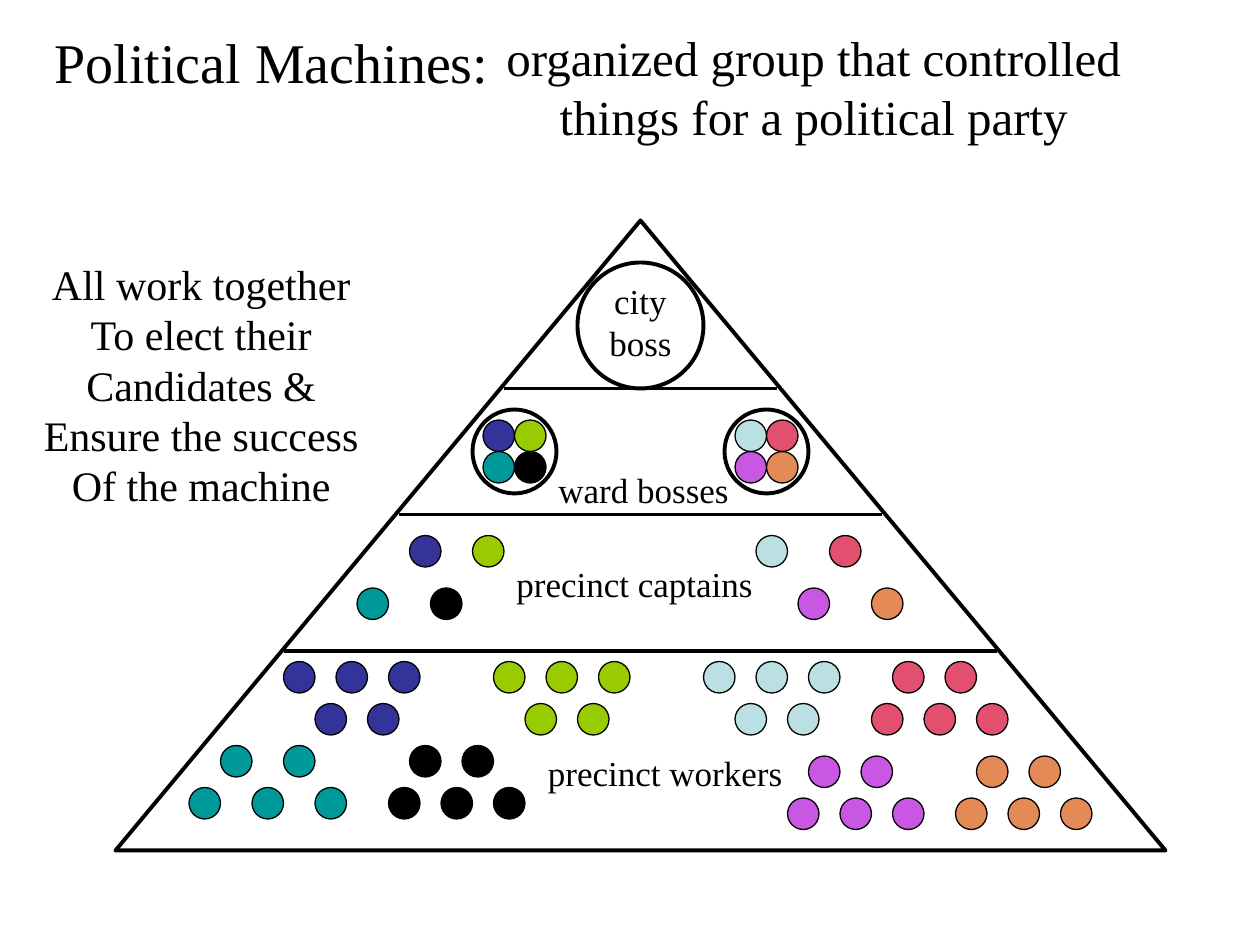
from dataclasses import dataclass

from lxml import etree
from pptx import Presentation
from pptx.dml.color import RGBColor
from pptx.enum.shapes import MSO_CONNECTOR, MSO_SHAPE
from pptx.enum.text import MSO_ANCHOR, MSO_AUTO_SIZE, PP_ALIGN
from pptx.oxml.ns import qn
from pptx.util import Pt

OVAL = MSO_SHAPE.OVAL
TRIANGLE = MSO_SHAPE.ISOSCELES_TRIANGLE
STRAIGHT = MSO_CONNECTOR.STRAIGHT
LEFT, CENTER = PP_ALIGN.LEFT, PP_ALIGN.CENTER
TOP = MSO_ANCHOR.TOP
NO_FIT = MSO_AUTO_SIZE.NONE

FONT = "Times New Roman"
BLACK = "000000"
DOT = 18
DROP = 24
THICK, THIN = 2.25, 0.75


@dataclass
class Row:
    left: float
    count: int
    step: float = 30


@dataclass
class Team:
    hue: str
    chief: tuple[float, float]
    top: float
    upper: Row
    lower: Row


@dataclass
class Ward:
    left: float
    teams: list[Team]


@dataclass
class Label:
    text: str
    box: tuple[float, float, float, float]
    size: float = 20
    align: PP_ALIGN = LEFT
    wrap: bool = False


WARDS = [
    Ward(270, [
        Team("333399", (234, 306), 378, Row(162, 3), Row(180, 2)),
        Team("99CC00", (270, 306), 378, Row(282, 3), Row(300, 2)),
        Team("009999", (204, 336), 426, Row(126, 2, 36), Row(108, 3, 36)),
        Team(BLACK, (246, 336), 426, Row(234, 2), Row(222, 3)),
    ]),
    Ward(414, [
        Team("BBE0E3", (432, 306), 378, Row(402, 3), Row(420, 2)),
        Team("E34F6F", (474, 306), 378, Row(510, 2), Row(498, 3)),
        Team("C858E3", (456, 336), 432, Row(462, 2), Row(450, 3)),
        Team("E38A56", (498, 336), 432, Row(558, 2), Row(546, 3)),
    ]),
]

TIERS = [(288, 444, 222), (228, 504, 294), (162, 570, 372)]

TITLE = Label("Political Machines:", (24, 12, 276, 45), 32, LEFT, True)
LABELS = [
    Label("organized group that controlled things for a political party",
          (258, 12, 414, 74), 28, CENTER, True),
    Label("All work together\nTo elect their\nCandidates &\n"
          "Ensure the success\nOf the machine", (18, 144, 194, 151), 24, CENTER),
    Label("city boss", (336, 156, 60, 55), 20, CENTER, True),
    Label("ward bosses", (312, 264, 114, 31)),
    Label("precinct captains", (288, 318, 150, 31)),
    Label("precinct workers", (306, 426, 150, 31)),
]


def color(code: str) -> RGBColor:
    return RGBColor.from_string(code)


def place(shape, box: tuple[float, float, float, float]) -> None:
    shape.left, shape.top, shape.width, shape.height = map(Pt, box)


def write(shape, label: Label) -> None:
    frame = shape.text_frame
    frame.text = label.text
    frame.word_wrap = label.wrap
    frame.auto_size = NO_FIT
    frame.vertical_anchor = TOP
    for para in frame.paragraphs:
        para.alignment = label.align
        for run in para.runs:
            run.font.name = FONT
            run.font.size = Pt(label.size)
            run.font.color.rgb = color(BLACK)


def draw(slide, kind: MSO_SHAPE, box: tuple[float, float, float, float],
         hue: str = "", weight: float = THICK) -> None:
    shape = slide.shapes.add_shape(kind, *map(Pt, box))
    shape.shadow.inherit = False
    if hue:
        shape.fill.solid()
        shape.fill.fore_color.rgb = color(hue)
    else:
        shape.fill.background()
    shape.line.color.rgb = color(BLACK)
    shape.line.width = Pt(weight)


def rule(slide, left: float, right: float, top: float) -> None:
    line = slide.shapes.add_connector(STRAIGHT, *map(Pt, (left, top, right, top)))
    line.line.color.rgb = color(BLACK)
    line.line.width = Pt(THICK)
    etree.SubElement(line._element.spPr, qn("a:effectLst"))


def dot(slide, left: float, top: float, hue: str) -> None:
    draw(slide, OVAL, (left, top, DOT, DOT), hue, THIN)


def crew(slide, team: Team) -> None:
    dot(slide, *team.chief, team.hue)
    for level, row in enumerate((team.upper, team.lower)):
        for i in range(row.count):
            dot(slide, row.left + i * row.step, team.top + level * DROP, team.hue)


def ring(slide, ward: Ward) -> None:
    draw(slide, OVAL, (ward.left, 234, 48, 48))
    for i, team in enumerate(ward.teams):
        down, across = divmod(i, 2)
        dot(slide, ward.left + 6 + across * DOT, 240 + down * DOT, team.hue)
        crew(slide, team)


def main() -> None:
    deck = Presentation()
    deck.slide_width, deck.slide_height = Pt(720), Pt(540)
    slide = deck.slides.add_slide(deck.slide_layouts[5])
    place(slide.shapes.title, TITLE.box)
    write(slide.shapes.title, TITLE)
    draw(slide, TRIANGLE, (66, 126, 600, 360))
    for tier in TIERS:
        rule(slide, *tier)
    draw(slide, OVAL, (330, 150, 72, 72))
    for ward in WARDS:
        ring(slide, ward)
    for label in LABELS:
        write(slide.shapes.add_textbox(*map(Pt, label.box)), label)
    deck.save("out.pptx")


if __name__ == "__main__":
    main()
